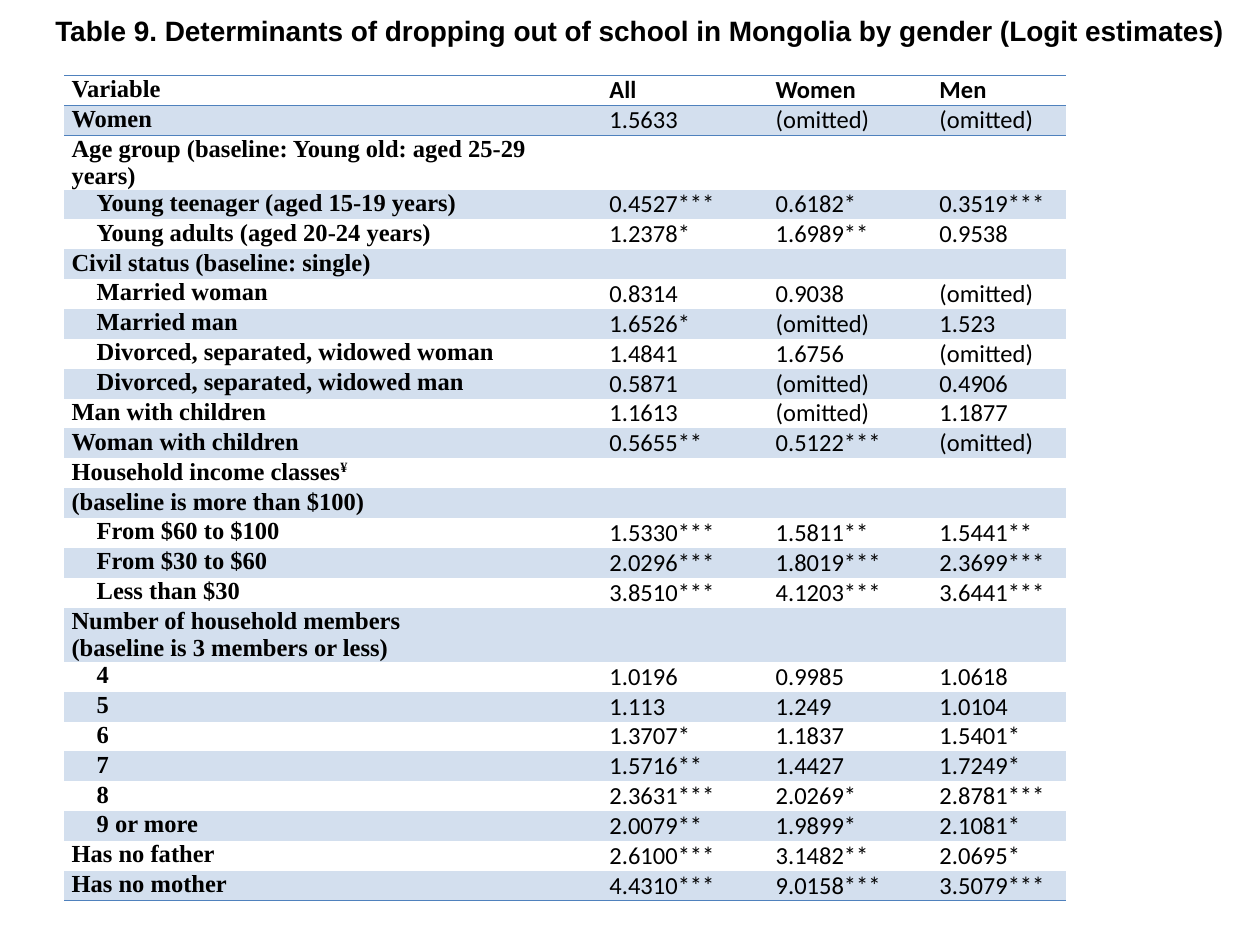
"""Build a slide with a table of logit estimates on school dropout by gender."""
from lxml.etree import SubElement
from pptx import Presentation
from pptx.dml.color import RGBColor
from pptx.enum.text import MSO_ANCHOR, MSO_AUTO_SIZE, PP_ALIGN
from pptx.oxml import parse_xml
from pptx.oxml.ns import nsdecls, qn
from pptx.util import Pt

TITLE = "Table 9. Determinants of dropping out of school in Mongolia by gender (Logit estimates)"
HEADINGS = ("Variable", "All", "Women", "Men")
OMITTED = "(omitted)"
FOOTNOTE = "¥"
GROUP, LEVEL = 0, 14.4
ESTIMATES = [
    (GROUP, "Women", "1.5633", OMITTED, OMITTED),
    (GROUP, "Age group (baseline: Young old: aged 25-29 years)"),
    (LEVEL, "Young teenager (aged 15-19 years)", "0.4527***", "0.6182*", "0.3519***"),
    (LEVEL, "Young adults (aged 20-24 years)", "1.2378*", "1.6989**", "0.9538"),
    (GROUP, "Civil status (baseline: single)"),
    (LEVEL, "Married woman", "0.8314", "0.9038", OMITTED),
    (LEVEL, "Married man", "1.6526*", OMITTED, "1.523"),
    (LEVEL, "Divorced, separated, widowed woman", "1.4841", "1.6756", OMITTED),
    (LEVEL, "Divorced, separated, widowed man", "0.5871", OMITTED, "0.4906"),
    (GROUP, "Man with children", "1.1613", OMITTED, "1.1877"),
    (GROUP, "Woman with children", "0.5655**", "0.5122***", OMITTED),
    (GROUP, "Household income classes" + FOOTNOTE),
    (GROUP, "(baseline is more than $100)"),
    (LEVEL, "From $60 to $100", "1.5330***", "1.5811**", "1.5441**"),
    (LEVEL, "From $30 to $60", "2.0296***", "1.8019***", "2.3699***"),
    (LEVEL, "Less than $30", "3.8510***", "4.1203***", "3.6441***"),
    (GROUP, "Number of household members\n(baseline is 3 members or less)"),
    (LEVEL, "4", "1.0196", "0.9985", "1.0618"),
    (LEVEL, "5", "1.113", "1.249", "1.0104"),
    (LEVEL, "6", "1.3707*", "1.1837", "1.5401*"),
    (LEVEL, "7", "1.5716**", "1.4427", "1.7249*"),
    (LEVEL, "8", "2.3631***", "2.0269*", "2.8781***"),
    (LEVEL, "9 or more", "2.0079**", "1.9899*", "2.1081*"),
    (GROUP, "Has no father", "2.6100***", "3.1482**", "2.0695*"),
    (GROUP, "Has no mother", "4.4310***", "9.0158***", "3.5079***"),
]
TABLE_LEFT, TABLE_TOP = 36.6, 43.2
COLUMN_WIDTHS = (291.6, 95, 93.6, 92.2)
ROW_HEIGHT, TWO_LINE_HEIGHT = 17, 31
TWO_LINE_ROWS = (2, 17)
TEXT_SIZE, CELL_MARGIN, VALUE_INDENT, TITLE_INDENT = 14, 4.3, 15.8, 20.2
BAND, RULE, INK = "D3DFEE", "4F81BD", "000000"
NO_TABLE_STYLE = "{2D5ABB26-0587-4C30-8999-92F81FD0307C}"


def color(hex_code):
    return RGBColor.from_string(hex_code)


def indent_first_line(paragraph, points):
    properties = paragraph._p.get_or_add_pPr()
    properties.set("marL", "0")
    properties.set("indent", str(int(Pt(points))))


def style_runs(paragraph, font_name, size, bold):
    for run in paragraph.runs:
        run.font.name, run.font.size, run.font.bold = font_name, Pt(size), bold
        run.font.color.rgb = color(INK)


def rule_cell(cell, sides):
    properties = cell._tc.get_or_add_tcPr()
    for position, side in enumerate(sides):
        properties.insert(position, parse_xml(
            f'<a:{side} {nsdecls("a")} w="{int(Pt(1))}"><a:solidFill>'
            f'<a:srgbClr val="{RULE}"/></a:solidFill></a:{side}>'))


def fill_cell(cell, text, indent, font_name, bold):
    cell.margin_left = cell.margin_right = Pt(CELL_MARGIN)
    cell.margin_top = cell.margin_bottom = 0
    body, mark, _ = text.partition(FOOTNOTE)
    cell.text_frame.text = body
    for paragraph in cell.text_frame.paragraphs:
        indent_first_line(paragraph, indent)
        if mark:
            footnote = paragraph.add_run()
            footnote.text = mark
            footnote.font._element.set("baseline", "30000")
        style_runs(paragraph, font_name, TEXT_SIZE, bold)
        if not text:
            SubElement(paragraph._p, qn("a:endParaRPr"), sz=str(TEXT_SIZE * 100))


def add_title(slide):
    title = slide.shapes.add_textbox(Pt(4.3), Pt(4.3), Pt(712), Pt(26.6)).text_frame
    title.word_wrap = False
    title.auto_size = MSO_AUTO_SIZE.SHAPE_TO_FIT_TEXT
    title.vertical_anchor = MSO_ANCHOR.MIDDLE
    title.text = TITLE
    heading = title.paragraphs[0]
    heading.alignment = PP_ALIGN.JUSTIFY
    indent_first_line(heading, TITLE_INDENT)
    style_runs(heading, "Arial", 16, True)


def add_estimates(slide):
    lines = [(GROUP, *HEADINGS), *ESTIMATES]
    heights = [TWO_LINE_HEIGHT if row in TWO_LINE_ROWS else ROW_HEIGHT
               for row in range(len(lines))]
    table = slide.shapes.add_table(
        len(lines), len(HEADINGS), Pt(TABLE_LEFT), Pt(TABLE_TOP),
        Pt(sum(COLUMN_WIDTHS)), Pt(sum(heights))).table
    table.first_row = table.horz_banding = False
    table._tbl.tblPr.find(qn("a:tableStyleId")).text = NO_TABLE_STYLE
    for column, width in zip(table.columns, COLUMN_WIDTHS):
        column.width = Pt(width)
    rules = {0: ("lnT", "lnB"), 1: ("lnT",), len(lines) - 1: ("lnB",)}
    for row, (label_indent, *texts) in enumerate(lines):
        table.rows[row].height = Pt(heights[row])
        texts += [""] * (len(HEADINGS) - len(texts))
        for column, text in enumerate(texts):
            cell = table.cell(row, column)
            is_label = column == 0
            fill_cell(cell, text, label_indent if is_label else VALUE_INDENT,
                      "Times New Roman" if is_label else "Calibri",
                      is_label or row == 0)
            if row % 2:
                cell.fill.solid()
                cell.fill.fore_color.rgb = color(BAND)
            else:
                cell.fill.background()
            rule_cell(cell, rules.get(row, ()))


def main():
    deck = Presentation()
    deck.slide_width, deck.slide_height = Pt(720), Pt(540)
    slide = deck.slides.add_slide(deck.slide_layouts[6])
    add_estimates(slide)
    add_title(slide)
    deck.save("out.pptx")


if __name__ == "__main__":
    main()
